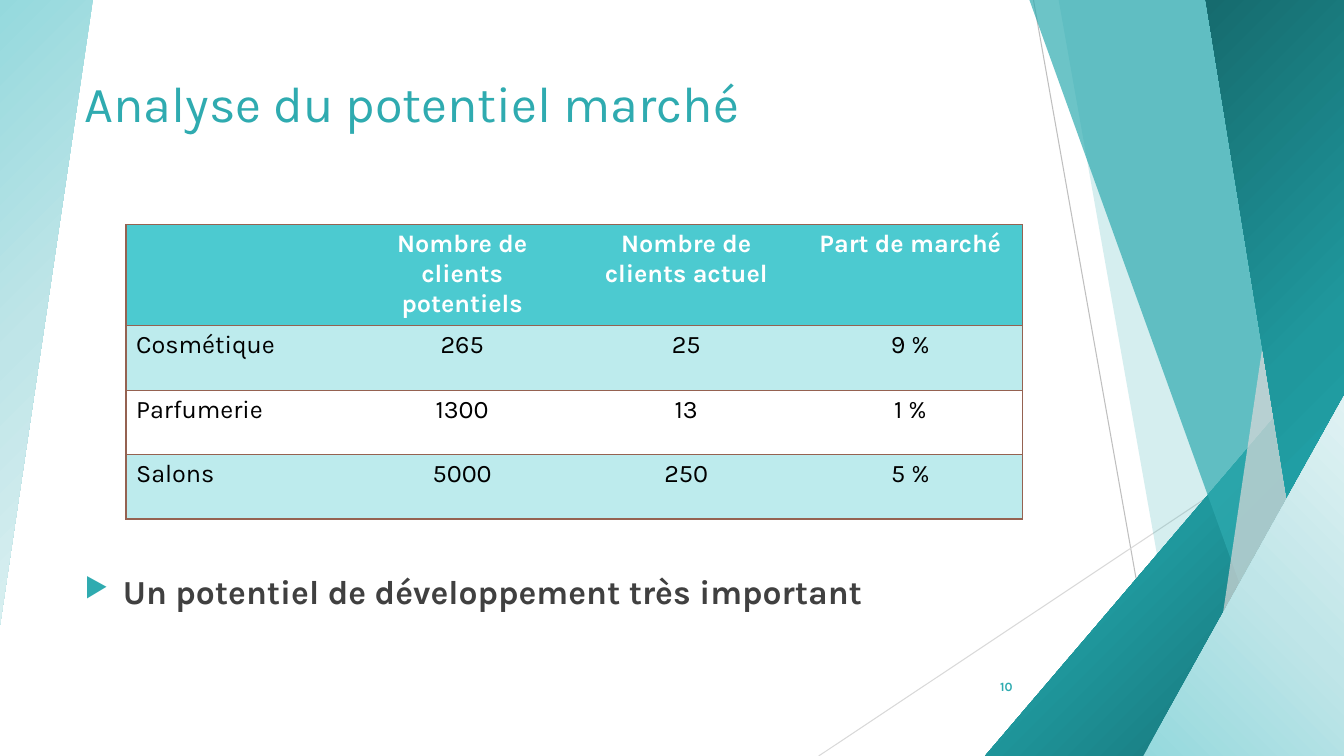
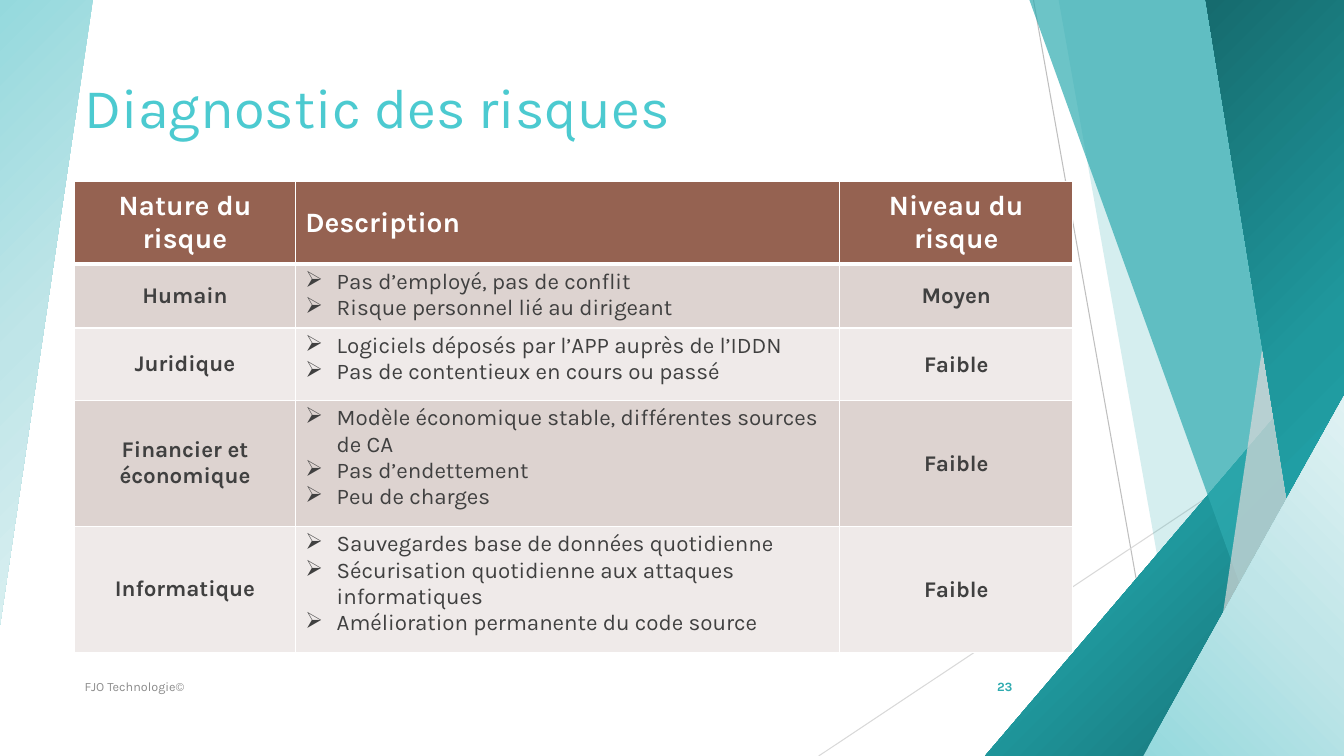
import pptx
import pptx.dml.color
import pptx.enum.shapes
import pptx.enum.text
import pptx.oxml
import pptx.oxml.ns
import pptx.util

Inches = pptx.util.Inches
Pt = pptx.util.Pt
RGBColor = pptx.dml.color.RGBColor
LEFT = pptx.enum.text.PP_ALIGN.LEFT
CENTER = pptx.enum.text.PP_ALIGN.CENTER
RIGHT = pptx.enum.text.PP_ALIGN.RIGHT
TOP = pptx.enum.text.MSO_ANCHOR.TOP
MIDDLE = pptx.enum.text.MSO_ANCHOR.MIDDLE
NS = pptx.oxml.ns.nsdecls("a")
qn = pptx.oxml.ns.qn

FONT = "Karla"
TEAL = RGBColor(0x2F, 0xAB, 0xB0)
AQUA = RGBColor(0x4C, 0xCA, 0xD0)
PALE_AQUA = RGBColor(0xBD, 0xEB, 0xED)
BROWN = RGBColor(0x95, 0x62, 0x51)
ROSE = RGBColor(0xDD, 0xD3, 0xD0)
PALE_ROSE = RGBColor(0xEF, 0xEA, 0xE9)
WARM_GREY = RGBColor(0xDC, 0xD9, 0xD9)
WHITE = RGBColor(0xFF, 0xFF, 0xFF)
BLACK = RGBColor(0x00, 0x00, 0x00)
TEXT_GREY = RGBColor(0x40, 0x40, 0x40)
FOOTER_GREY = RGBColor(0x8C, 0x8C, 0x8C)
LINE_GREY = RGBColor(0xBF, 0xBF, 0xBF)
LIGHT_LINE = RGBColor(0xD9, 0xD9, 0xD9)
DARK_STOPS = (RGBColor(0x16, 0x6B, 0x6E), RGBColor(0x1F, 0x98, 0x9D), RGBColor(0x25, 0xB4, 0xBA))
LIGHT_STOPS = (RGBColor(0x95, 0xD9, 0xDD), RGBColor(0xBF, 0xE5, 0xE8), RGBColor(0xE0, 0xF2, 0xF3))

FROM_BOTTOM_RIGHT = '<a:path path="circle"><a:fillToRect l="100000" t="100000"/></a:path>'
FROM_TOP_LEFT = '<a:path path="circle"><a:fillToRect r="100000" b="100000"/></a:path>'
DIAGONAL_UP = '<a:lin ang="18900000" scaled="0"/>'
DIAGONAL_BACK = '<a:lin ang="13500000" scaled="0"/>'

RAYS = [
    ((10.25, 0), (11.58, 7.5), LINE_GREY),
    ((13.33, 4.03), (8.12, 7.5), LIGHT_LINE),
]
FACETS = [
    ("band", (10.5, 13.33, 13.33, 11.83), TEAL, 20),
    ("triangle", (9.77, 3.33, 3.56, 4.17), DARK_STOPS, FROM_BOTTOM_RIGHT),
    ("band", (10.21, 13.33, 13.33, 12.91), TEAL, 70),
    ("band", (13.03, 13.33, 13.33, 11.92), WARM_GREY, 70),
    ("band", (11.96, 13.33, 13.33, 13.18), DARK_STOPS, FROM_TOP_LEFT),
    ("triangle", (11.34, 3.93, 1.99, 3.57), LIGHT_STOPS, DIAGONAL_UP),
    ("turned triangle", (0, 0, 0.92, 6.2), LIGHT_STOPS, DIAGONAL_BACK),
]


def write(paragraph, text, size, color, bold=False, align=LEFT, bullet="", indent=0):
    paragraph.alignment = align
    if bullet:
        properties = paragraph._p.get_or_add_pPr()
        properties.set("marL", str(Inches(indent)))
        properties.set("indent", str(-Inches(indent)))
        if bullet == "▶":
            properties.append(pptx.oxml.parse_xml(
                f'<a:buClr {NS}><a:srgbClr val="{TEAL}"/></a:buClr>'))
            properties.append(pptx.oxml.parse_xml(f'<a:buSzPct {NS} val="80000"/>'))
        properties.append(pptx.oxml.parse_xml(f'<a:buChar {NS} char="{bullet}"/>'))
    run = paragraph.add_run()
    run.text = text
    run.font.name = FONT
    run.font.size = Pt(size)
    run.font.bold = bold
    run.font.color.rgb = color


def style_cell(cell, color, line_color, widths):
    cell.fill.solid()
    cell.fill.fore_color.rgb = color
    for position, (side, width) in enumerate(zip("LRTB", widths)):
        paint = f'<a:solidFill><a:srgbClr val="{line_color}"/></a:solidFill>' if width else "<a:noFill/>"
        cell._tc.get_or_add_tcPr().insert(position, pptx.oxml.parse_xml(
            f'<a:ln{side} {NS} w="{Pt(width)}">{paint}</a:ln{side}>'))


deck = pptx.Presentation()
deck.slide_width = Inches(13.33)
deck.slide_height = Inches(7.5)

slides = []
for title, title_size, title_color, number in [
    ("Analyse du potentiel marché", 36, TEAL, "10"),
    ("Diagnostic des risques", 40, AQUA, "23"),
]:
    slide = deck.slides.add_slide(deck.slide_layouts[6])
    slides.append(slide)
    for start, end, color in RAYS:
        ray = slide.shapes.add_connector(
            pptx.enum.shapes.MSO_CONNECTOR.STRAIGHT, *map(Inches, start + end))
        ray.line.color.rgb = color
        ray.line.width = Pt(0.75)
        ray._element.spPr.append(pptx.oxml.parse_xml(f"<a:effectLst {NS}/>"))
    for kind, place, color, shading in FACETS:
        if kind == "band":
            corners = [(Inches(x), Inches(y)) for x, y in zip(place, (0, 0, 7.5, 7.5))]
            outline = slide.shapes.build_freeform(*corners[0])
            outline.add_line_segments(corners[1:], close=True)
            facet = outline.convert_to_shape()
        else:
            facet = slide.shapes.add_shape(
                pptx.enum.shapes.MSO_SHAPE.ISOSCELES_TRIANGLE, *map(Inches, place))
            facet.adjustments[0] = 1
            facet.rotation = 180 if kind == "turned triangle" else 0
        facet.shadow.inherit = False
        facet.line.fill.background()
        if isinstance(shading, str):
            stops = "".join(
                f'<a:gs pos="{i * 50000}"><a:srgbClr val="{stop}"/></a:gs>'
                for i, stop in enumerate(color))
            facet.fill.background()
            properties = facet._element.spPr
            properties.replace(properties.find(qn("a:noFill")), pptx.oxml.parse_xml(
                f'<a:gradFill {NS} rotWithShape="1"><a:gsLst>{stops}</a:gsLst>{shading}</a:gradFill>'))
        else:
            facet.fill.solid()
            facet.fill.fore_color.rgb = color
            facet._element.spPr.find(qn("a:solidFill"))[0].append(
                pptx.oxml.parse_xml(f'<a:alpha {NS} val="{shading * 1000}"/>'))

    texts = [
        ((0.74, 0.67, 9.4, 1.44), TOP, (title, title_size, title_color)),
        ((9.39, 6.61, 0.75, 0.4), MIDDLE, (number, 9, TEAL, True, RIGHT)),
    ]
    if number == "10":
        texts.append(((0.74, 5.61, 9.4, 0.99), TOP, (
            "Un potentiel de développement très important", 24, TEXT_GREY, True, LEFT, "▶", 0.38)))
    else:
        texts.append(((0.74, 6.61, 6.89, 0.4), MIDDLE, ("FJO Technologie©", 9, FOOTER_GREY)))
    for place, anchor, content in texts:
        frame = slide.shapes.add_textbox(*map(Inches, place)).text_frame
        frame.word_wrap = True
        frame.vertical_anchor = anchor
        write(frame.paragraphs[0], *content)

market_slide, risk_slide = slides

market_rows = [
    ("", "Nombre de clients potentiels", "Nombre de clients actuel", "Part de marché"),
    ("Cosmétique", "265", "25", "9 %"),
    ("Parfumerie", "1300", "13", "1 %"),
    ("Salons", "5000", "250", "5 %"),
]
market = market_slide.shapes.add_table(
    4, 4, Inches(1.25), Inches(2.23), Inches(8.89), Inches(2.9)).table
for r, values in enumerate(market_rows):
    market.rows[r].height = Inches(0.64 if r else 0.98)
    for c, value in enumerate(values):
        cell = market.cell(r, c)
        fill = AQUA if r == 0 else PALE_AQUA if r % 2 else WHITE
        style_cell(cell, fill, BROWN, (int(c == 0), int(c == 3), 1, 1))
        if value:
            write(cell.text_frame.paragraphs[0], value, 18, BLACK if r else WHITE,
                  r == 0, CENTER if c else LEFT)

risk_rows = [
    (0.82, "Nature du risque", ["Description"], "Niveau du risque"),
    (0.61, "Humain", ["Pas d’employé, pas de conflit", "Risque personnel lié au dirigeant"], "Moyen"),
    (0.72, "Juridique", ["Logiciels déposés par l’APP auprès de l’IDDN",
                         "Pas de contentieux en cours ou passé"], "Faible"),
    (1.25, "Financier et économique", ["Modèle économique stable, différentes sources de CA",
                                       "Pas d’endettement", "Peu de charges"], "Faible"),
    (1.25, "Informatique", ["Sauvegardes base de données quotidienne",
                            "Sécurisation quotidienne aux attaques informatiques",
                            "Amélioration permanente du code source"], "Faible"),
]
risks = risk_slide.shapes.add_table(
    5, 3, Inches(0.74), Inches(1.8), Inches(9.9), Inches(4.65)).table
for column, width in zip(risks.columns, (2.19, 5.4, 2.31)):
    column.width = Inches(width)
for r, (height, nature, description, level) in enumerate(risk_rows):
    risks.rows[r].height = Inches(height)
    for c, lines in enumerate(([nature], description, [level])):
        cell = risks.cell(r, c)
        fill = BROWN if r == 0 else ROSE if r % 2 else PALE_ROSE
        style_cell(cell, fill, WHITE, (1, 1, 3 if r == 1 else 1, 1 if r else 3))
        listed = r > 0 and c == 1
        cell.vertical_anchor = TOP if listed else MIDDLE
        if r and c == 2:
            cell.margin_left = cell.margin_right = cell.margin_top = Inches(0.01)
            cell.margin_bottom = 0
        for i, line in enumerate(lines):
            frame = cell.text_frame
            paragraph = frame.add_paragraph() if i else frame.paragraphs[0]
            write(paragraph, line, 16 if r else 20, TEXT_GREY if r else WHITE, not listed,
                  LEFT if c == 1 else CENTER, "➢" if listed else "", 0.31)

deck.save("out.pptx")
